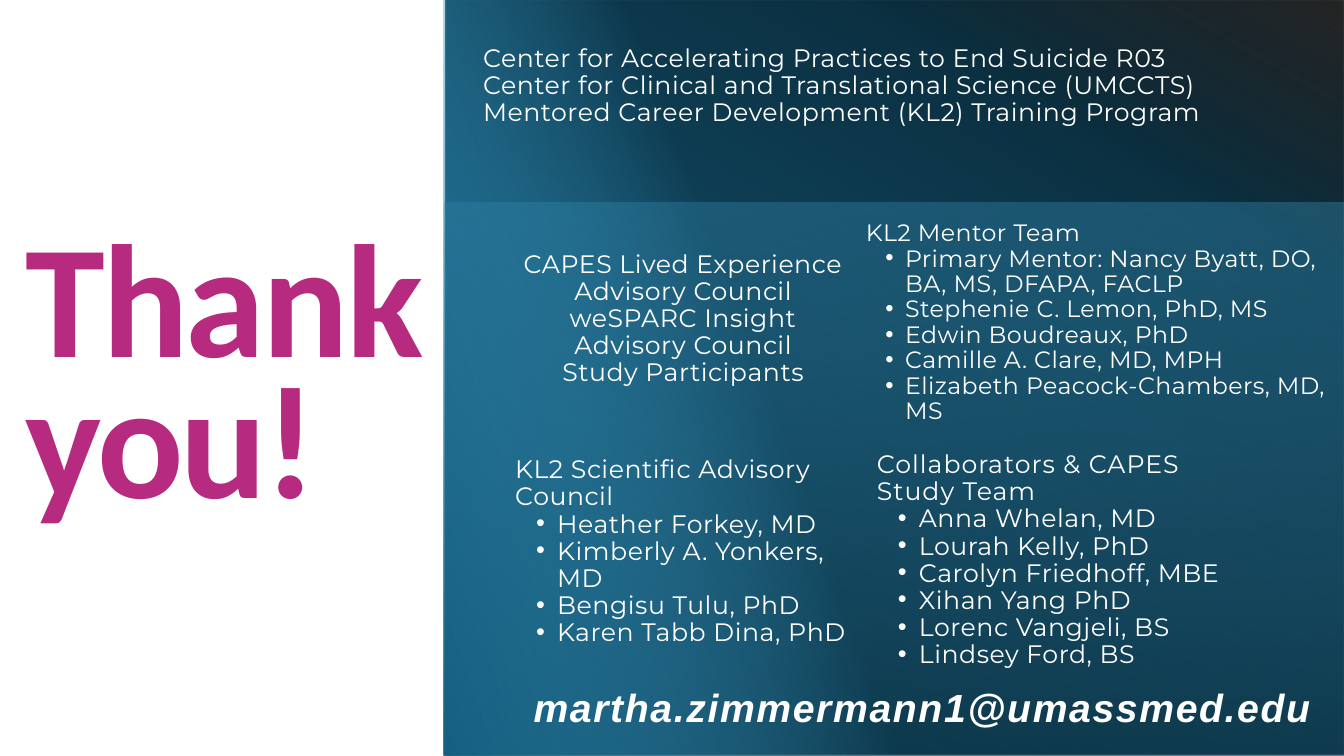
from dataclasses import dataclass

from lxml import etree
from pptx import Presentation
from pptx.dml.color import RGBColor
from pptx.enum import shapes, text
from pptx.oxml.ns import qn
from pptx.util import Pt

WHITE = RGBColor(0xFF, 0xFF, 0xFF)
BLACK = RGBColor(0x00, 0x00, 0x00)
MAGENTA = RGBColor(0xB6, 0x2A, 0x7F)
TEAL = RGBColor(0x15, 0x60, 0x82)
NAVY = RGBColor(0x0B, 0x30, 0x41)
SKY = RGBColor(0x46, 0xB1, 0xE1)


@dataclass(frozen=True)
class Stop:
    position: int
    color: RGBColor
    opacity: int = 100


@dataclass(frozen=True)
class Panel:
    box: tuple[float, float, float, float]
    stops: tuple[Stop, ...]
    angle: int
    flipped: bool = False
    rotation: int = 0


@dataclass(frozen=True)
class Style:
    font: str
    size: float
    leading: float
    tracking: float
    color: RGBColor = WHITE
    bold: bool = False
    italic: bool = False
    align: text.PP_ALIGN = text.PP_ALIGN.LEFT


@dataclass(frozen=True)
class Credit:
    box: tuple[float, float, float, float]
    lines: tuple[str, ...]
    style: Style
    members: tuple[str, ...] = ()
    member_style: Style | None = None
    indent: float = 30


BODY = Style("Montserrat", 18, 19.4, 0.4)
CENTERED = Style("Montserrat", 18, 19.4, 0.4, align=text.PP_ALIGN.CENTER)
WIDE = Style("Montserrat", 18, 19.4, 0.7)
COMPACT = Style("Montserrat", 16.9, 18.2, 0.3)
EMAIL = Style("Arial", 28, 35.7, 1.2, bold=True, italic=True, align=text.PP_ALIGN.RIGHT)
THANKS = Style("Calibri", 115, 50.5, -1.9, MAGENTA, bold=True)

PANELS = (
    Panel((318, 0, 642, 540),
          (Stop(2, TEAL), Stop(78, NAVY), Stop(100, BLACK, 85)), 300),
    Panel((317.5, 144.5, 642.5, 395.5),
          (Stop(0, SKY, 30), Stop(100, BLACK, 44)), 80, flipped=True),
    Panel((319.7, -2.7, 540, 545),
          (Stop(56, SKY, 0), Stop(100, TEAL)), 110, flipped=True, rotation=90),
)

CREDITS = (
    Credit((345, 32.4, 597, 77),
           ("Center for Accelerating Practices to End Suicide R03",
            "Center for Clinical and Translational Science (UMCCTS) "
            "Mentored Career Development (KL2) Training Program"), BODY),
    Credit((368, 179.3, 240, 97),
           ("CAPES Lived Experience Advisory Council",
            "weSPARC Insight Advisory Council",
            "Study Participants"), CENTERED),
    Credit((368, 326.2, 240, 136),
           ("KL2 Scientific Advisory Council",), BODY,
           ("Heather Forkey, MD", "Kimberly A. Yonkers, MD",
            "Bengisu Tulu, PhD", "Karen Tabb Dina, PhD")),
    Credit((618.5, 157.7, 341, 146),
           ("KL2 Mentor Team",), COMPACT,
           ("Primary Mentor: Nancy Byatt, DO, BA, MS, DFAPA, FACLP",
            "Stephenie C. Lemon, PhD, MS", "Edwin Boudreaux, PhD",
            "Camille A. Clare, MD, MPH", "Elizabeth Peacock-Chambers, MD, MS"),
           indent=28),
    Credit((626.4, 322.5, 330, 156),
           ("Collaborators & CAPES", "Study Team"), WIDE,
           ("Anna Whelan, MD", "Lourah Kelly, PhD", "Carolyn Friedhoff, MBE",
            "Xihan Yang PhD", "Lorenc Vangjeli, BS", "Lindsey Ford, BS"), BODY),
    Credit((296, 486, 640.7, 36), ("martha.zimmermann1@umassmed.edu",), EMAIL),
)


def add_panel(slide, panel: Panel) -> None:
    rect = slide.shapes.add_shape(
        shapes.MSO_SHAPE.RECTANGLE, *(Pt(side) for side in panel.box))
    rect.shadow.inherit = False
    rect.line.fill.background()
    rect.rotation = panel.rotation
    rect.fill.background()
    properties = rect.element.spPr
    if panel.flipped:
        properties.find(qn("a:xfrm")).set("flipH", "1")
    gradient = etree.Element(qn("a:gradFill"), rotWithShape="1")
    stops = etree.SubElement(gradient, qn("a:gsLst"))
    for stop in panel.stops:
        mark = etree.SubElement(stops, qn("a:gs"), pos=str(stop.position * 1000))
        color = etree.SubElement(mark, qn("a:srgbClr"), val=str(stop.color))
        if stop.opacity < 100:
            etree.SubElement(color, qn("a:alpha"), val=str(stop.opacity * 1000))
    etree.SubElement(gradient, qn("a:lin"), ang=str(panel.angle * 60000), scaled="0")
    properties.replace(properties.find(qn("a:noFill")), gradient)


def prepare_frame(frame, anchor: text.MSO_ANCHOR) -> None:
    frame.margin_left = frame.margin_top = frame.margin_right = frame.margin_bottom = 0
    frame.word_wrap = True
    frame.auto_size = text.MSO_AUTO_SIZE.NONE
    frame.vertical_anchor = anchor


def format_paragraph(paragraph, style: Style) -> None:
    paragraph.alignment = style.align
    paragraph.line_spacing = Pt(style.leading)
    for run in paragraph.runs:
        run.font.name = style.font
        run.font.size = Pt(style.size)
        run.font.bold = style.bold
        run.font.italic = style.italic
        run.font.color.rgb = style.color
        run.font._element.set("spc", str(round(style.tracking * 100)))


def add_bullet(paragraph, indent: float) -> None:
    paragraph.level = 1
    properties = paragraph._p.get_or_add_pPr()
    properties.set("marL", str(Pt(indent)))
    properties.set("indent", str(-Pt(indent / 2)))
    etree.SubElement(properties, qn("a:buFont"), typeface="Arial")
    etree.SubElement(properties, qn("a:buChar"), char="•")


def add_credit(slide, credit: Credit) -> None:
    frame = slide.shapes.add_textbox(*(Pt(side) for side in credit.box)).text_frame
    prepare_frame(frame, text.MSO_ANCHOR.TOP)
    frame.text = "\n".join(credit.lines + credit.members)
    for position, paragraph in enumerate(frame.paragraphs):
        if position < len(credit.lines):
            format_paragraph(paragraph, credit.style)
        else:
            format_paragraph(paragraph, credit.member_style or credit.style)
            add_bullet(paragraph, credit.indent)


def set_title(slide) -> None:
    title = slide.shapes.title
    title.left, title.top, title.width, title.height = (
        Pt(side) for side in (18, 219, 300, 169))
    frame = title.text_frame
    prepare_frame(frame, text.MSO_ANCHOR.MIDDLE)
    frame.text = "Thank\nyou!"
    for paragraph in frame.paragraphs:
        format_paragraph(paragraph, THANKS)
    frame.paragraphs[1].space_before = Pt(THANKS.leading)


def main() -> None:
    deck = Presentation()
    deck.slide_width, deck.slide_height = Pt(960), Pt(540)
    slide = deck.slides.add_slide(deck.slide_layouts[5])
    for panel in PANELS:
        add_panel(slide, panel)
    set_title(slide)
    for credit in CREDITS:
        add_credit(slide, credit)
    deck.save("out.pptx")


if __name__ == "__main__":
    main()
